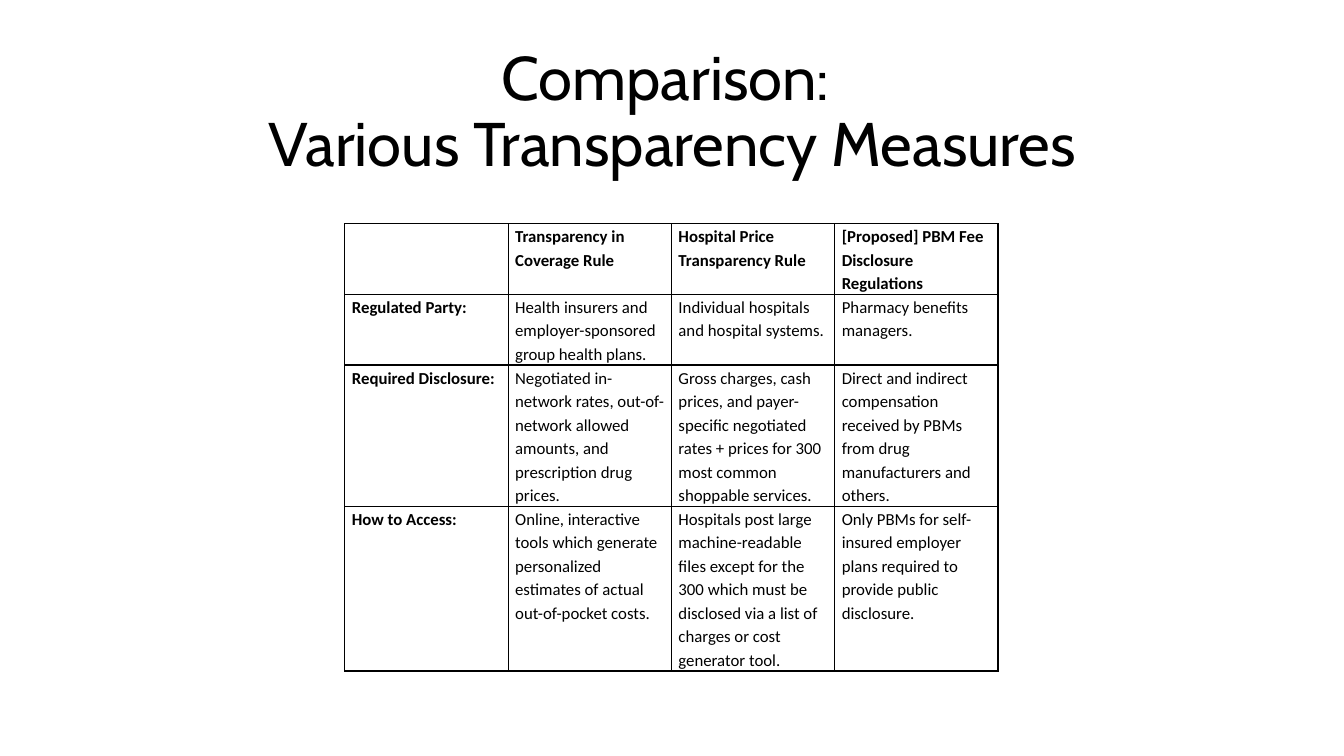
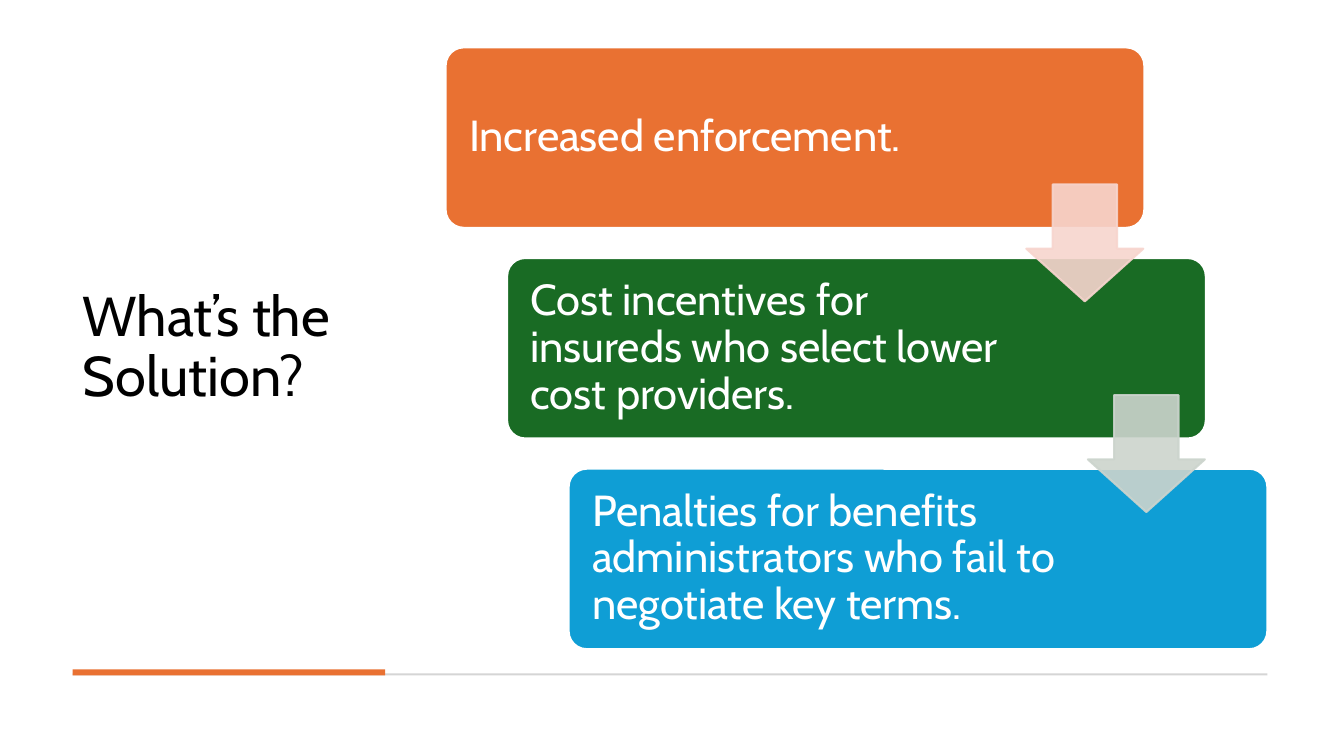
from lxml import etree
from pptx import Presentation
from pptx.dml.color import RGBColor
from pptx.enum.shapes import MSO_SHAPE
from pptx.enum.text import MSO_ANCHOR, MSO_AUTO_SIZE, PP_ALIGN
from pptx.oxml.ns import qn
from pptx.util import Emu, Pt

LEFT, CENTER = PP_ALIGN.LEFT, PP_ALIGN.CENTER
MIDDLE, TOP = MSO_ANCHOR.MIDDLE, MSO_ANCHOR.TOP
RECTANGLE = MSO_SHAPE.RECTANGLE
ROUNDED = MSO_SHAPE.ROUNDED_RECTANGLE
DOWN_ARROW = MSO_SHAPE.DOWN_ARROW
NO_AUTOFIT = MSO_AUTO_SIZE.NONE

EMU_PER_PX = 9144  # 100 px to the inch
TITLE_ONLY = 5
COLORS = {
    "black": "000000",
    "white": "FFFFFF",
    "rule": "D5D5D5",
    "orange": "E97132",
    "green": "196B24",
    "blue": "0F9ED5",
    "pale orange": "F7D5CE",
    "pale green": "CCD4CD",
}
MEASURES = [
    ["", "Transparency in Coverage Rule", "Hospital Price Transparency Rule",
     "[Proposed] PBM Fee Disclosure Regulations"],
    ["Regulated Party:",
     "Health insurers and employer-sponsored group health plans.",
     "Individual hospitals and hospital systems.",
     "Pharmacy benefits managers."],
    ["Required Disclosure:",
     "Negotiated in-network rates, out-of-network allowed amounts, and "
     "prescription drug prices.",
     "Gross charges, cash prices, and payer-specific negotiated rates + "
     "prices for 300 most common shoppable services.",
     "Direct and indirect compensation received by PBMs from drug "
     "manufacturers and others."],
    ["How to Access:",
     "Online, interactive tools which generate personalized estimates of "
     "actual out-of-pocket costs.",
     "Hospitals post large machine-readable files except for the 300 which "
     "must be disclosed via a list of charges or cost generator tool.",
     "Only PBMs for self-insured employer plans required to provide public "
     "disclosure."],
]
STEPS = [
    ("Increased enforcement.", "orange"),
    ("Cost incentives for insureds who select lower cost providers.", "green"),
    ("Penalties for benefits administrators who fail to negotiate key terms.",
     "blue"),
]


def px(length):
    return Emu(length * EMU_PER_PX)


def rgb(name):
    return RGBColor.from_string(COLORS[name])


def set_attributes(target, values):
    for name, value in values.items():
        setattr(target, name, value)


class Deck:
    """Holds the shared style and the slide being built."""

    heading_font = "Cabin"
    table_font = "Calibri"

    def __init__(self, width, height):
        self.presentation = Presentation()
        set_attributes(self.presentation,
                       {"slide_width": px(width), "slide_height": px(height)})
        self.slide = None

    def add_slide(self):
        layout = self.presentation.slide_layouts[TITLE_ONLY]
        self.slide = self.presentation.slides.add_slide(layout)

    def set_text(self, frame, text, size, font, color="black", bold=False,
                 **paragraph_format):
        frame.text = text
        paragraph = frame.paragraphs[0]
        set_attributes(paragraph, paragraph_format)
        set_attributes(paragraph.font,
                       {"size": Pt(size), "name": font, "bold": bold})
        paragraph.font.color.rgb = rgb(color)

    def title(self, text, left, top, width, height, size, align):
        title = self.slide.shapes.title
        set_attributes(title, {"left": px(left), "top": px(top),
                               "width": px(width), "height": px(height)})
        set_attributes(title.text_frame, {
            "word_wrap": True, "auto_size": NO_AUTOFIT,
            "vertical_anchor": MIDDLE})
        self.set_text(title.text_frame, text, size, self.heading_font,
                      alignment=align, line_spacing=0.9)

    def shape(self, kind, left, top, width, height, fill, line=None,
              adjustments=(), opacity=100):
        shape = self.slide.shapes.add_shape(
            kind, px(left), px(top), px(width), px(height))
        shape.shadow.inherit = False
        for index, value in enumerate(adjustments):
            shape.adjustments[index] = value
        shape.fill.solid()
        shape.fill.fore_color.rgb = rgb(fill)
        if line:
            shape.line.color.rgb = rgb(line)
            shape.line.width = Pt(1.5)
        else:
            shape.line.fill.background()
        if opacity < 100:
            for color in shape._element.spPr.iter(qn("a:srgbClr")):
                etree.SubElement(color, qn("a:alpha"), val=str(opacity * 1000))
        return shape

    def step_box(self, text, left, top, width, height, fill):
        box = self.shape(ROUNDED, left, top, width, height, fill, "white", [0.1])
        set_attributes(box.text_frame, {
            "word_wrap": True, "vertical_anchor": MIDDLE,
            "margin_left": px(18), "margin_right": px(201),
            "margin_top": px(18), "margin_bottom": px(18)})
        self.set_text(box.text_frame, text, 31, self.heading_font, "white",
                      alignment=LEFT, line_spacing=0.9)

    def border(self, cell):
        """Draws a thin black line on all four sides of a cell."""
        properties = cell._tc.get_or_add_tcPr()
        for index, side in enumerate(("lnL", "lnR", "lnT", "lnB")):
            line = etree.Element(qn(f"a:{side}"), w=str(Pt(1)))
            fill = etree.SubElement(line, qn("a:solidFill"))
            etree.SubElement(fill, qn("a:srgbClr"), val=COLORS["black"])
            properties.insert(index, line)

    def table(self, rows, left, top, column_width, row_heights):
        column_count = len(rows[0])
        table = self.slide.shapes.add_table(
            len(rows), column_count, px(left), px(top),
            px(column_width * column_count), px(sum(row_heights))).table
        set_attributes(table, {"first_row": False, "horz_banding": False})
        for column in table.columns:
            column.width = px(column_width)
        for row_index, texts in enumerate(rows):
            table.rows[row_index].height = px(row_heights[row_index])
            for column_index, text in enumerate(texts):
                cell = table.cell(row_index, column_index)
                set_attributes(cell, {
                    "margin_left": px(7), "margin_right": px(7),
                    "margin_top": 0, "margin_bottom": 0,
                    "vertical_anchor": TOP})
                cell.fill.background()
                self.border(cell)
                self.set_text(cell.text_frame, text, 12, self.table_font,
                              bold=row_index == 0 or column_index == 0,
                              line_spacing=1.15, space_after=Pt(8))


def build_comparison(deck):
    deck.add_slide()
    deck.title("Comparison: \vVarious Transparency Measures",
               92, 40, 1150, 145, 44, CENTER)
    deck.table(MEASURES, 342, 222, 162, [70, 70, 140, 163])


def build_solution(deck):
    deck.add_slide()
    deck.title("What’s the Solution?", 72, 47, 310, 597, 40, LEFT)
    deck.shape(RECTANGLE, 72, 668, 1185, 2, "rule")
    deck.shape(RECTANGLE, 72, 664, 310, 6, "orange")
    step_right, step_down = 61, 209
    for index, (text, fill) in enumerate(STEPS):
        deck.step_box(text, 442 + index * step_right, 47 + index * step_down,
                      693, 179, fill)
    for index, color in enumerate(("pale orange", "pale green")):
        deck.shape(DOWN_ARROW, 1018 + index * step_right,
                   183 + index * step_down, 116, 116, color, color,
                   [0.55, 0.45], opacity=90)


def main():
    deck = Deck(1333, 750)
    build_comparison(deck)
    build_solution(deck)
    deck.presentation.save("out.pptx")


if __name__ == "__main__":
    main()
